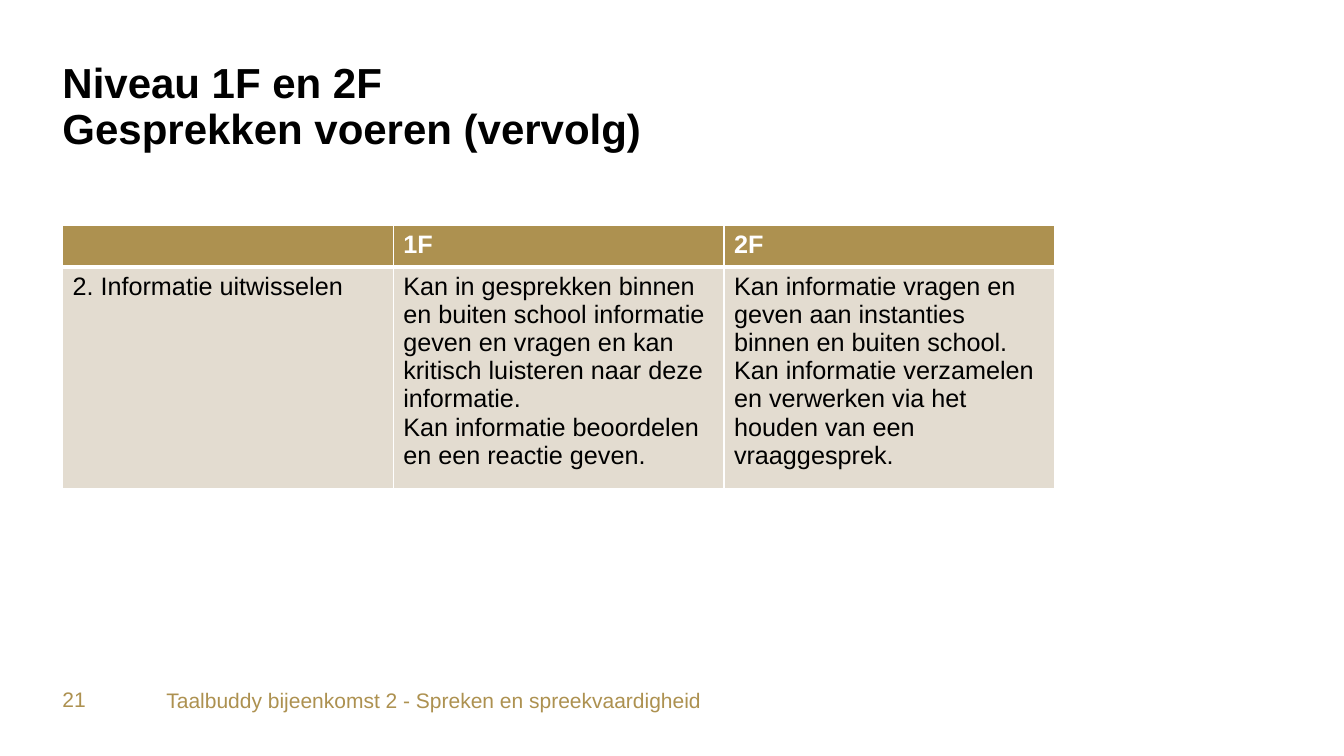
from lxml import etree
from pptx import Presentation
from pptx.dml.color import RGBColor
from pptx.oxml import ns
from pptx.util import Inches, Pt

# Content
TITLE = "Niveau 1F en 2F\nGesprekken voeren (vervolg)"
FOOTER = "Taalbuddy bijeenkomst 2 - Spreken en spreekvaardigheid"
PAGE_NUMBER = "21"
ROWS = [
    [[""], ["1F"], ["2F"]],
    [
        ["2. Informatie uitwisselen"],
        ["Kan in gesprekken binnen en buiten school informatie geven en vragen "
         "en kan kritisch luisteren naar deze informatie.",
         "Kan informatie beoordelen en een reactie geven."],
        ["Kan informatie vragen en geven aan instanties binnen en buiten school.",
         "Kan informatie verzamelen en verwerken via het houden van een vraaggesprek."],
    ],
]

# Style
FONT = "Arial"
BLACK, WHITE, GOLD, SAND = "000000", "FFFFFF", "AD9150", "E3DCD0"
LEFT = 0.62
COLUMN_WIDTH = 3.28
ROW_HEIGHTS = [0.41, 2.05]


def color(hex_value):
    return RGBColor.from_string(hex_value)


def style(para, size, hex_value, bold=False):
    para.font.name = FONT
    para.font.size = Pt(size)
    para.font.bold = bold
    para.font.color.rgb = color(hex_value)


def add_text(page, words, place, size, hex_value, bold=False):
    box = page.shapes.add_textbox(*map(Inches, place))
    frame = box.text_frame
    frame.word_wrap = True
    frame.margin_left = frame.margin_right = 0
    frame.margin_top = frame.margin_bottom = 0
    para = frame.paragraphs[0]
    para.text = words
    style(para, size, hex_value, bold)
    return para


def add_borders(cell, widths):
    properties = cell._tc.get_or_add_tcPr()
    for side, width in widths.items():
        line = etree.SubElement(properties, ns.qn(f"a:ln{side}"), w=str(Pt(width)))
        fill = etree.SubElement(line, ns.qn("a:solidFill"))
        etree.SubElement(fill, ns.qn("a:srgbClr"), val=WHITE)


deck = Presentation()
deck.slide_width, deck.slide_height = Inches(13.33), Inches(7.5)
page = deck.slides.add_slide(deck.slide_layouts[6])

# Title
title = add_text(page, TITLE, (LEFT, 0.62, 12.06, 1.31), 30, BLACK, bold=True)
title.line_spacing = 0.9

# Table of levels
columns = len(ROWS[0])
table = page.shapes.add_table(
    len(ROWS), columns, Inches(LEFT), Inches(2.24),
    Inches(columns * COLUMN_WIDTH), Inches(sum(ROW_HEIGHTS))).table
for column in table.columns:
    column.width = Inches(COLUMN_WIDTH)
for r, (cells, height) in enumerate(zip(ROWS, ROW_HEIGHTS)):
    table.rows[r].height = Inches(height)
    header = r == 0
    borders = {"L": 1, "R": 1, "T": 1 if header else 3, "B": 3 if header else 1}
    for c, lines in enumerate(cells):
        cell = table.cell(r, c)
        add_borders(cell, borders)
        cell.fill.solid()
        cell.fill.fore_color.rgb = color(GOLD if header else SAND)
        cell.text = "\n".join(lines)
        for para in cell.text_frame.paragraphs:
            style(para, 18, WHITE if header else BLACK, bold=header)

# Footer
add_text(page, FOOTER, (1.65, 6.82, 10.78, 0.34), 15, GOLD)
add_text(page, PAGE_NUMBER, (LEFT, 6.81, 0.84, 0.33), 15, GOLD)

deck.save("out.pptx")
